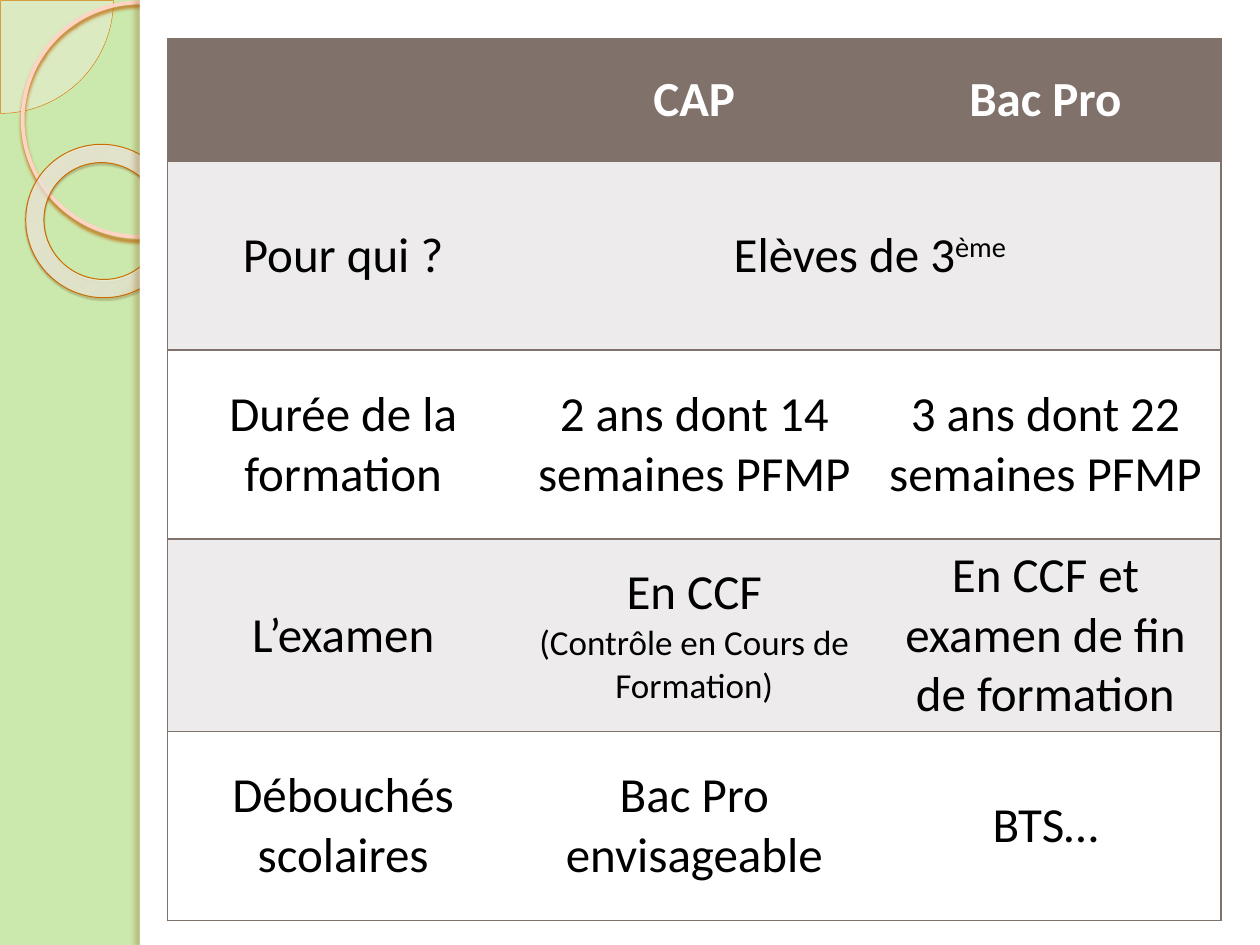
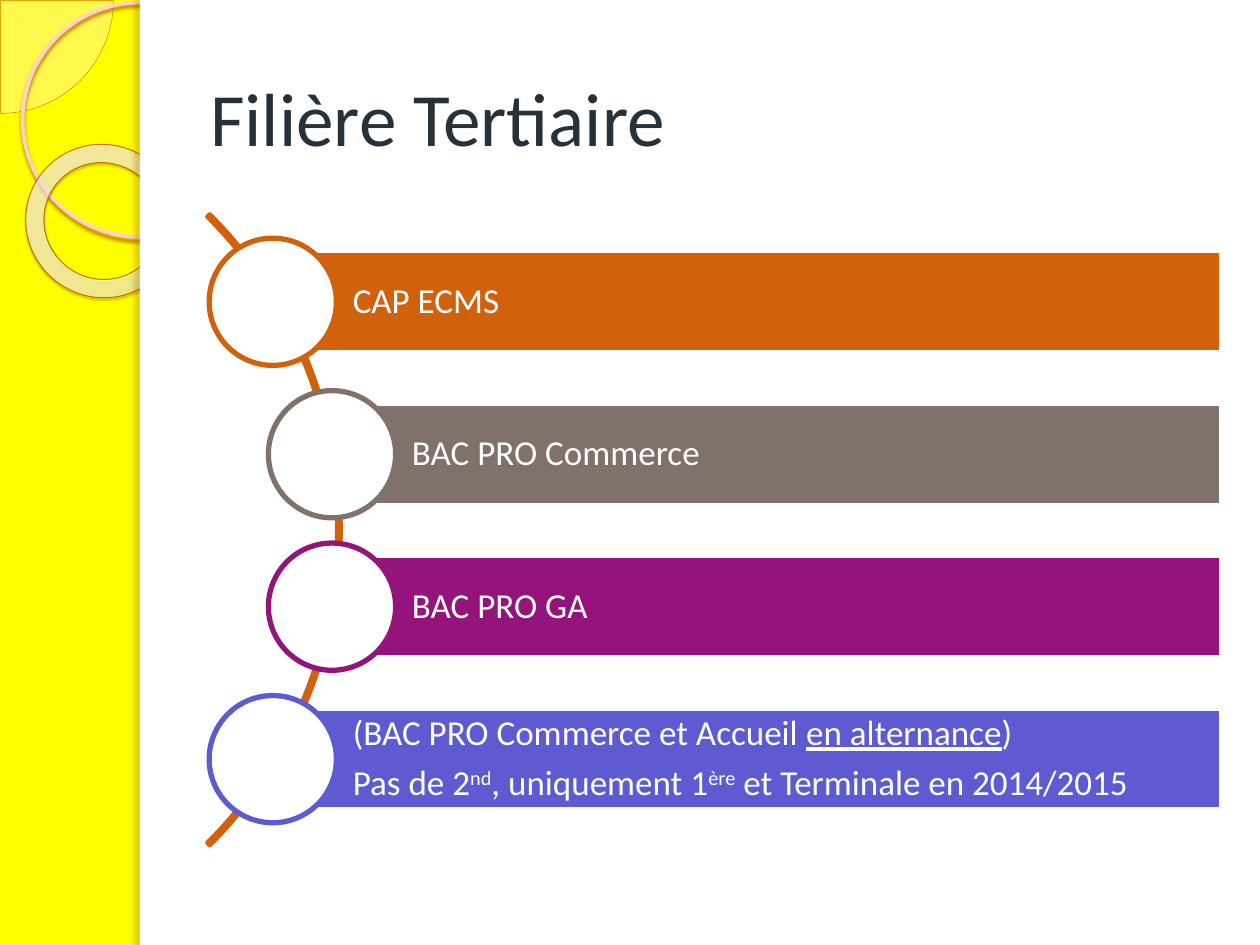
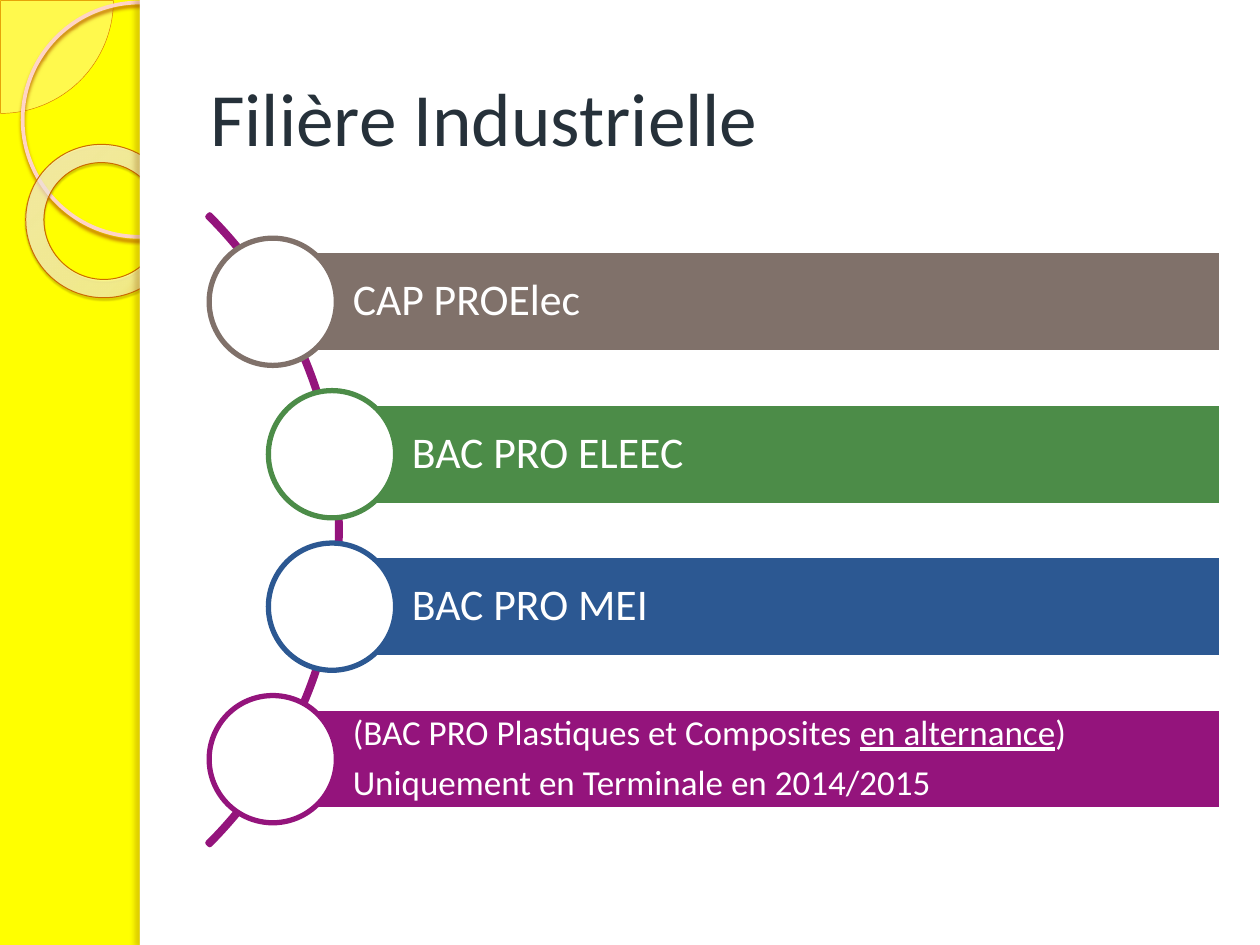
from lxml import etree
from pptx import Presentation
from pptx import util as u
from pptx.dml.color import RGBColor
from pptx.enum import shapes, text
from pptx.oxml import parse_xml
from pptx.oxml.ns import nsdecls, qn

COLORS = {
    "green_band": "CCE9AD", "yellow_band": "FFFF00", "white": "FFFFFF", "black": "000000",
    "title": "26313A", "taupe": "80716A", "light": "EDEBEB", "orange": "D2610C",
    "purple": "94147C", "violet": "5D5AD2", "green": "4C8C48", "blue": "2C5892",
    "petal": "FFEFEA", "petal_edge": "DA7300", "ring": "FFD4C5", "ring_shadow": "BD6300",
    "donut_edge": "CC6B00", "donut_shadow": "5E3100", "panel_shadow": "7F4300",
}
FONT = "Calibri"
DONUT_STOPS = [(0, "FFF5F1", 70), (70, "FFFAF8", 55), (100, "E17600", 60)]
SHAPE = shapes.MSO_SHAPE
ALIGN = text.PP_ALIGN
MIDDLE = text.MSO_ANCHOR.MIDDLE


def rgb(name):
    return RGBColor.from_string(COLORS[name])


def apply(target, values):
    for name, value in values.items():
        setattr(target, name, value)


def color_xml(value, alpha):
    return f'<a:srgbClr val="{value}"><a:alpha val="{alpha * 1000}"/></a:srgbClr>'


class SlideBuilder:
    def __init__(self):
        self.deck = Presentation()
        apply(self.deck, {"slide_width": u.Inches(10), "slide_height": u.Inches(7.5)})
        self.page = None

    def new_page(self, band):
        self.page = self.deck.slides.add_slide(self.deck.slide_layouts[6])
        fill = self.page.background.fill
        fill.solid()
        fill.fore_color.rgb = rgb(band)
        self.decorate()

    def shape(self, kind, place, fill=None, line=None, width=0, adjust=(), shadow=None):
        item = self.page.shapes.add_shape(kind, *map(u.Inches, place))
        item.shadow.inherit = False
        for index, value in enumerate(adjust):
            item.adjustments[index] = value
        if fill:
            item.fill.solid()
            item.fill.fore_color.rgb = rgb(fill)
        else:
            item.fill.background()
        if line:
            item.line.color.rgb = rgb(line)
            item.line.width = u.Pt(width)
        else:
            item.line.fill.background()
        if shadow:
            self.cast_shadow(item, *shadow)
        return item

    def cast_shadow(self, item, color, alpha, blur, distance, angle):
        effects = item._element.spPr.find(qn("a:effectLst"))
        effects.append(parse_xml(
            f'<a:outerShdw {nsdecls("a")} blurRad="{u.Pt(blur)}" dist="{u.Pt(distance)}" '
            f'dir="{angle * 60000}" algn="tl" rotWithShape="0">'
            f'{color_xml(COLORS[color], alpha)}</a:outerShdw>'))

    def radial_fill(self, item, stops):
        properties = item._element.spPr
        marks = "".join(f'<a:gs pos="{place * 1000}">{color_xml(color, alpha)}</a:gs>'
                        for place, color, alpha in stops)
        properties.replace(properties.find(qn("a:noFill")), parse_xml(
            f'<a:gradFill {nsdecls("a")} rotWithShape="1"><a:gsLst>{marks}</a:gsLst>'
            '<a:path path="circle"><a:fillToRect l="-408000" t="-50000" r="508000" b="150000"/>'
            '</a:path></a:gradFill>'))

    def decorate(self):
        petal = self.shape(SHAPE.PIE, (-0.89, -0.89, 1.79, 1.79), "petal", "petal_edge", 0.25,
                           adjust=(0, 54.02))
        tint = petal._element.spPr.find(qn("a:solidFill"))[0]
        etree.SubElement(tint, qn("a:alpha")).set("val", "33000")
        self.shape(SHAPE.OVAL, (0.18, 0.02, 1.86, 1.86), None, "ring", 2.15,
                   shadow=("ring_shadow", 85, 2, 2, 90))
        donut = self.shape(SHAPE.DONUT, (0.2, 1.15, 1.23, 1.21), None, "donut_edge", 0.58,
                           adjust=(0.12,), shadow=("donut_shadow", 35, 1, 1.2, 75))
        donut.rotation = 38.6
        self.radial_fill(donut, DONUT_STOPS)
        self.shape(SHAPE.RECTANGLE, (1.11, 0, 8.89, 7.5), "white")
        self.shape(SHAPE.RECTANGLE, (1.11, 0, 0.08, 7.5), "white",
                   shadow=("panel_shadow", 25, 3, 3, 180))

    def fill_text(self, frame, lines, size, color, layout=None, **font):
        for index, line in enumerate(lines):
            para = frame.paragraphs[0] if index == 0 else frame.add_paragraph()
            apply(para, layout or {})
            for part in [line] if isinstance(line, str) else line:
                words, form = (part, {}) if isinstance(part, str) else part
                span = para.add_run()
                span.text = words
                span.font.color.rgb = rgb(color)
                values = {"name": FONT, "size": u.Pt(size), **font, **form}
                raised = values.pop("raised", False)
                apply(span.font, values)
                if raised:
                    span._r.get_or_add_rPr().set("baseline", "30000")

    def title(self, words):
        box = self.page.shapes.add_textbox(*map(u.Inches, (1.57, 0.3, 8.2, 1.25)))
        apply(box.text_frame, {"word_wrap": True, "vertical_anchor": MIDDLE})
        self.fill_text(box.text_frame, [words], 43, "title")

    def arc_list(self, arc_color, entries):
        self.shape(SHAPE.BLOCK_ARC, (-4.37, 0.67, 7.07, 7.07), None, arc_color, 3,
                   adjust=(189, 27, 0.003))
        for index, (color, size, lines) in enumerate(entries):
            left = 2.16 if index in (0, len(entries) - 1) else 2.63
            top = 1.99 + 1.21 * index
            bar = self.shape(SHAPE.RECTANGLE, (left, top, 9.7 - left, 0.81), color, "white", 3)
            inset = u.Inches(0.06)
            apply(bar.text_frame, {
                "word_wrap": True, "vertical_anchor": MIDDLE, "margin_left": u.Inches(0.64),
                "margin_top": inset, "margin_right": inset, "margin_bottom": inset})
            self.fill_text(bar.text_frame, lines, size, "white", {
                "alignment": ALIGN.LEFT, "line_spacing": 0.9, "space_after": u.Pt(size * 0.35)})
            self.shape(SHAPE.OVAL, (left - 0.5, top - 0.1, 1.01, 1.01), "white", color, 3)

    def border(self, cell, sides):
        properties = cell._tc.get_or_add_tcPr()
        for index, (side, shown) in enumerate(sides.items()):
            paint = (f'<a:solidFill><a:srgbClr val="{COLORS["taupe"]}"/></a:solidFill>'
                     if shown else "<a:noFill/>")
            properties.insert(index, parse_xml(
                f'<a:ln{side} {nsdecls("a")} w="{u.Pt(1)}">{paint}</a:ln{side}>'))

    def table(self, place, heights, rows):
        columns = len(rows[0])
        grid = self.page.shapes.add_table(len(rows), columns, *map(u.Inches, place)).table
        apply(grid, {"first_row": False, "horz_banding": False})
        for column in grid.columns:
            column.width = u.Inches(place[2] / columns)
        for i, row in enumerate(rows):
            grid.rows[i].height = u.Inches(heights[i])
            fill = "taupe" if i == 0 else "light" if i % 2 else "white"
            for j, lines in enumerate(row):
                cell = grid.cell(i, j)
                cell.vertical_anchor = MIDDLE
                cell.fill.solid()
                cell.fill.fore_color.rgb = rgb(fill)
                last = j == columns - 1 or row[j + 1] is None
                self.border(cell, {"L": j == 0, "R": last, "T": True, "B": True})
                self.fill_text(cell.text_frame, lines or [], 28, "white" if i == 0 else "black",
                               {"alignment": ALIGN.CENTER}, bold=i == 0)
                if lines is None:
                    grid.cell(i, j - 1).merge(cell)


RAISED = {"raised": True}
UNDERLINED = {"underline": True}

COMPARISON = [
    [[], ["CAP"], ["Bac Pro"]],
    [["Pour qui ?"], [["Elèves de 3", ("ème", RAISED)]], None],
    [["Durée de la formation"], ["2 ans dont 14 semaines PFMP"], ["3 ans dont 22 semaines PFMP"]],
    [["L’examen"],
     ["En CCF", [("(Contrôle en Cours de Formation)", {"size": u.Pt(20)})]],
     ["En CCF et examen de fin de formation"]],
    [["Débouchés scolaires"], ["Bac Pro envisageable"], ["BTS…"]],
]

TRACKS = [
    ("Filière Tertiaire", "orange", [
        ("orange", 20, ["CAP ECMS"]),
        ("taupe", 20, ["BAC PRO Commerce"]),
        ("purple", 20, ["BAC PRO GA"]),
        ("violet", 20, [
            ["(BAC PRO Commerce et Accueil ", ("en alternance", UNDERLINED), ")"],
            ["Pas de 2", ("nd", RAISED), ", uniquement 1", ("ère", RAISED),
             " et Terminale en 2014/2015"]]),
    ]),
    ("Filière Industrielle", "purple", [
        ("taupe", 25, ["CAP PROElec"]),
        ("green", 25, ["BAC PRO ELEEC"]),
        ("blue", 25, ["BAC PRO MEI"]),
        ("purple", 20, [
            ["(BAC PRO Plastiques et Composites ", ("en alternance", UNDERLINED), ")"],
            "Uniquement en Terminale en 2014/2015"]),
    ]),
]


def main():
    builder = SlideBuilder()
    builder.new_page("green_band")
    builder.table((1.33, 0.31, 8.36, 6.97), [0.97] + [1.5] * 4, COMPARISON)
    for heading, arc_color, entries in TRACKS:
        builder.new_page("yellow_band")
        builder.title(heading)
        builder.arc_list(arc_color, entries)
    builder.deck.save("out.pptx")


if __name__ == "__main__":
    main()
